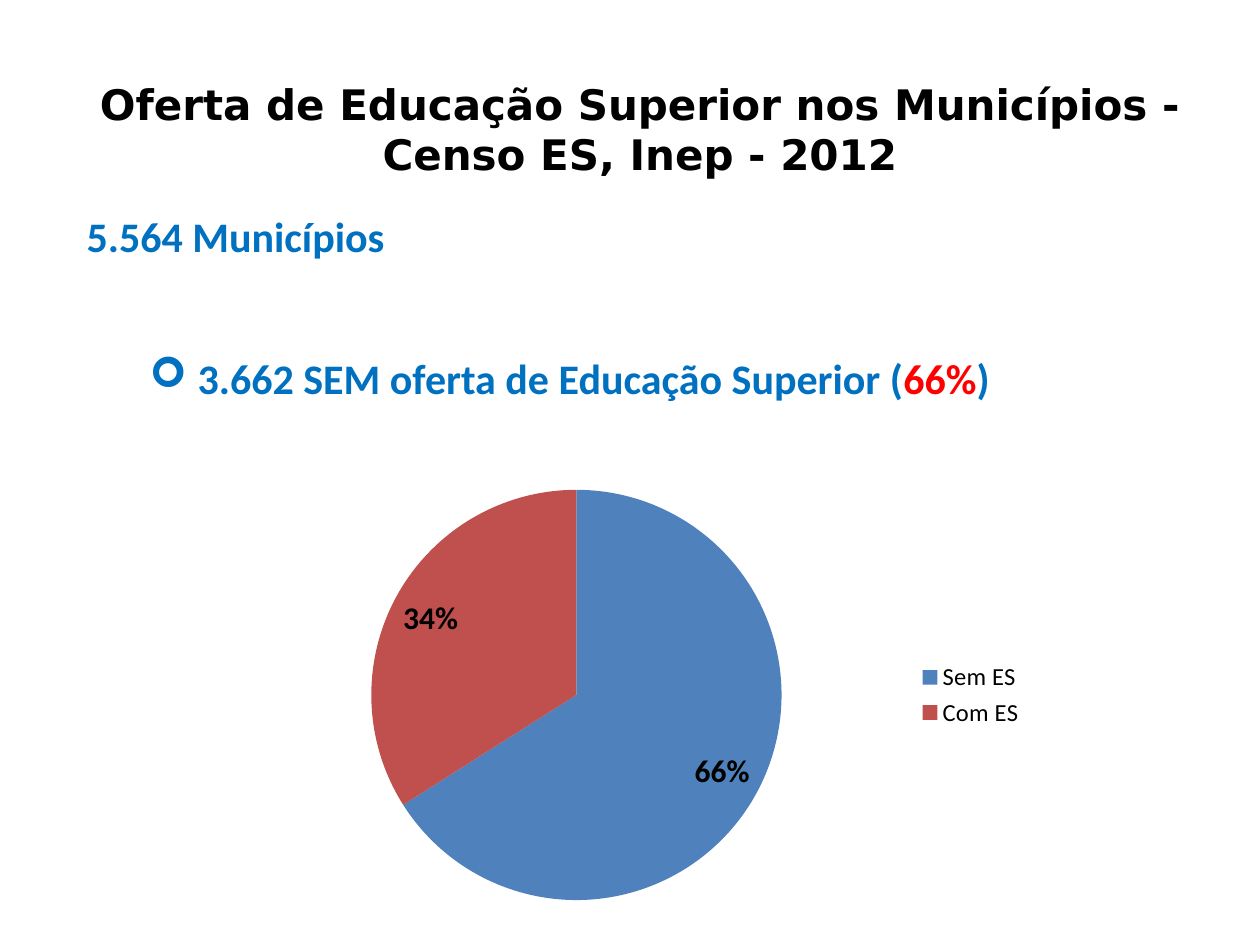
from lxml import etree
from pptx import Presentation, util as u
from pptx.chart.data import CategoryChartData
from pptx.dml.color import RGBColor
from pptx.enum import chart as ch, text
from pptx.oxml.ns import qn

PX = 914400 // 126
HUES = {"blue": "0070C0", "red": "FF0000", "black": "000000",
        "sem": "4F81BD", "com": "C0504D"}
TITLE = "Oferta de Educação Superior nos Municípios - Censo ES, Inep - 2012"
ITEMS = [
    {"level": 0, "left": 48, "gap": 0, "mark": None,
     "runs": [("5.564 Municípios", "blue")]},
    {"level": 1, "left": 111, "gap": 52.5, "mark": "➢",
     "runs": [("3.662 SEM oferta de Educação Superior (", "blue"),
              ("66%", "red"), (")", "blue")]},
]
SHARES = [("Sem ES", 66, "sem"), ("Com ES", 34, "com")]
BOXES = {"title": (34, 68, 1212, 136), "body": (74, 204, 1131, 217),
         "chart": (243, 472, 794, 446)}
PIE = {"x": 0.16, "y": 0.04, "w": 0.52, "h": 0.92}
HANG = 48


def px(n):
    return u.Emu(n * PX)


def hue(name):
    return RGBColor.from_string(HUES[name])


def style(font, size, color, bold=False, face="Calibri"):
    font.size, font.bold, font.name = u.Pt(size), bold, face
    font.color.rgb = hue(color)


def place(shape, box):
    shape.left, shape.top, shape.width, shape.height = map(px, box)
    frame = shape.text_frame
    frame.word_wrap = True
    frame.auto_size = text.MSO_AUTO_SIZE.NONE
    frame.vertical_anchor = text.MSO_ANCHOR.TOP
    return frame


def indent(para, left, mark):
    props = para._p.get_or_add_pPr()
    props.set("marL", str(px(left)))
    props.set("indent", str(px(-HANG)))
    if mark:
        etree.SubElement(props, qn("a:buFont"), typeface="Wingdings")
        etree.SubElement(props, qn("a:buChar"), char=mark)
    else:
        etree.SubElement(props, qn("a:buNone"))


def add_title(slide):
    frame = place(slide.shapes.title, BOXES["title"])
    frame.margin_top = px(10)
    para = frame.paragraphs[0]
    para.text = TITLE
    para.alignment = text.PP_ALIGN.CENTER
    style(para.font, 24, "black", True, "DejaVu Sans")


def add_list(slide):
    frame = place(slide.placeholders[1], BOXES["body"])
    for i, item in enumerate(ITEMS):
        para = frame.add_paragraph() if i else frame.paragraphs[0]
        para.level = item["level"]
        indent(para, item["left"], item["mark"])
        para.space_before = u.Pt(item["gap"])
        style(para.font, 24, "blue", True)
        for words, color in item["runs"]:
            run = para.add_run()
            run.text = words
            run.font.color.rgb = hue(color)


def add_pie(slide):
    data = CategoryChartData()
    data.categories = [name for name, _, _ in SHARES]
    data.add_series("Series 1", [share for _, share, _ in SHARES])
    chart = slide.shapes.add_chart(
        ch.XL_CHART_TYPE.PIE, *map(px, BOXES["chart"]), data).chart
    style(chart.font, 14, "black")
    chart.has_title = False
    chart.has_legend = True
    chart.legend.position = ch.XL_LEGEND_POSITION.RIGHT
    chart.legend.include_in_layout = False
    plot = chart.plots[0]
    plot.vary_by_categories = True
    for i, (_, _, color) in enumerate(SHARES):
        fill = plot.series[0].points[i].format.fill
        fill.solid()
        fill.fore_color.rgb = hue(color)
    plot.has_data_labels = True
    tags = plot.data_labels
    tags.show_percentage, tags.show_value = True, False
    tags.number_format, tags.number_format_is_linked = "0%", False
    tags.position = ch.XL_LABEL_POSITION.INSIDE_END
    style(tags.font, 18, "black", True)
    area = chart._chartSpace.chart.plotArea
    for old in area.findall(qn("c:layout")):
        area.remove(old)
    layout = etree.Element(qn("c:layout"))
    area.insert(0, layout)
    manual = etree.SubElement(layout, qn("c:manualLayout"))
    rules = {"layoutTarget": "inner", "xMode": "edge", "yMode": "edge", **PIE}
    for key, val in rules.items():
        etree.SubElement(manual, qn("c:" + key), val=str(val))


def main():
    deck = Presentation()
    deck.slide_width, deck.slide_height = px(1260), px(945)
    slide = deck.slides.add_slide(deck.slide_layouts[1])
    add_list(slide)
    add_title(slide)
    add_pie(slide)
    deck.save("out.pptx")


if __name__ == "__main__":
    main()
